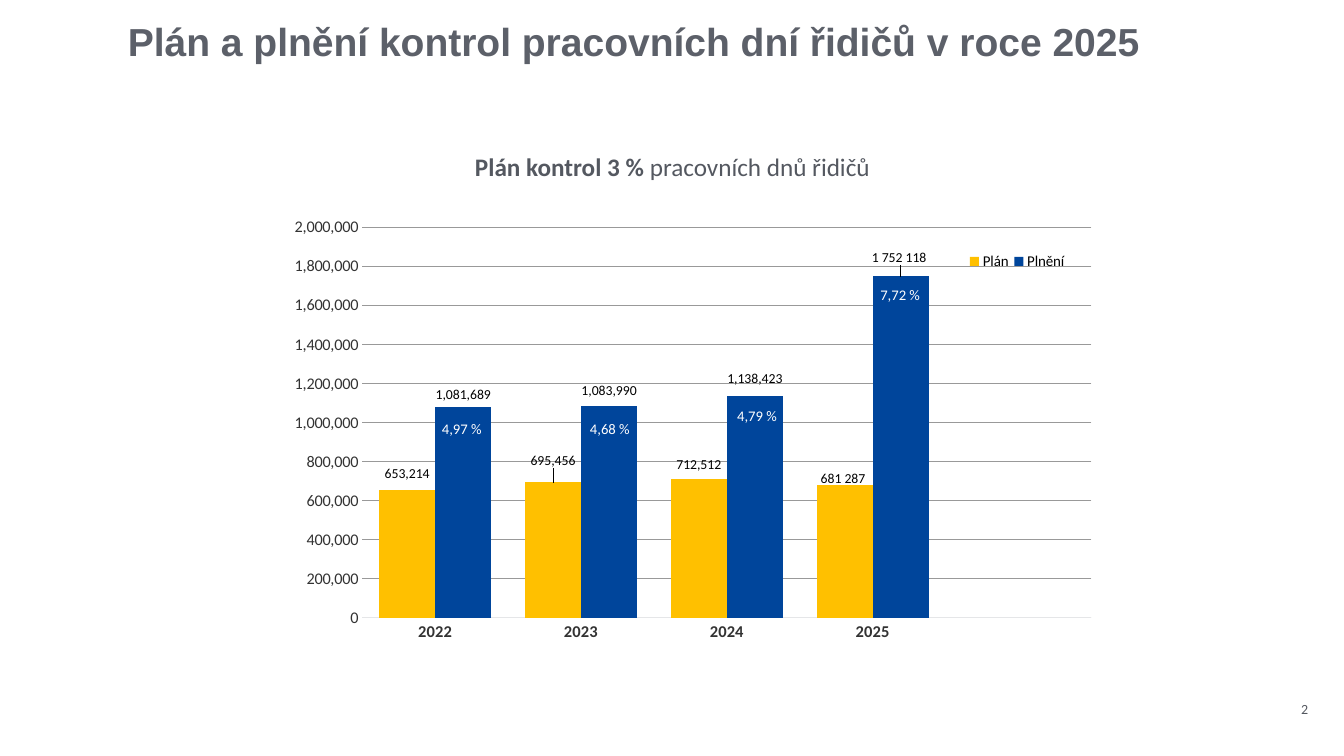
from pptx import Presentation
from pptx.chart.data import CategoryChartData
from pptx.dml.color import RGBColor
from pptx.enum.chart import XL_CHART_TYPE, XL_LABEL_POSITION, XL_LEGEND_POSITION, XL_TICK_MARK
from pptx.enum.text import MSO_ANCHOR, PP_ALIGN
from pptx.oxml import parse_xml
from pptx.oxml.ns import nsdecls
from pptx.util import Pt

TITLE = "Plán a plnění kontrol pracovních dní řidičů v roce 2025"
SUBTITLE = [("Plán kontrol 3 % ", True), ("pracovních dnů řidičů", False)]
PAGE = "2"
YEARS = ["2022", "2023", "2024", "2025", ""]
SERIES = [
    ("Plán", "FFC000", [653214, 695456, 712512, 681287, None], "681 287 ",
     [(0, -0.01), (0, -0.022), (0, -0.006), (0, 0.012)]),
    ("Plnění", "00459B", [1081689, 1083990, 1138423, 1752118, None], "1 752 118 ",
     [(0, 0), (0, -0.008), (0, -0.012), (0, -0.014)]),
]
SHARES = [("4,97 %", 304.6, 296.6), ("4,68 %", 410.4, 296.6),
          ("4,79 %", 515.5, 287.3), ("7,72 %", 617.8, 200.9)]
PLOT_AREA = (0.134, 0.045, 0.861, 0.872)
LEGEND_AREA = (0.845, 0.09, 0.125, 0.06)
GREY = "545860"


def rgb(value):
    return RGBColor.from_string(value)


def style(font, size, color, bold=False, name="Calibri"):
    font.size, font.bold, font.name = Pt(size), bold, name
    font.color.rgb = rgb(color)


def add_text(box, runs, size, color, align=PP_ALIGN.LEFT, anchor=MSO_ANCHOR.TOP,
             name="Calibri", wrap=True):
    tf = s.shapes.add_textbox(*map(Pt, box)).text_frame
    tf.word_wrap, tf.vertical_anchor = wrap, anchor
    p = tf.paragraphs[0]
    p.alignment = align
    for text, bold in runs:
        r = p.add_run()
        r.text = text
        style(r.font, size, color, bold, name)
    return tf


def layout(x, y, w=None, h=None, inner=False):
    target = '<c:layoutTarget val="inner"/>' if inner else ""
    modes = '<c:xMode val="edge"/><c:yMode val="edge"/>' if w else ""
    size = f'<c:w val="{w}"/><c:h val="{h}"/>' if w else ""
    return parse_xml(f'<c:layout {nsdecls("c")}><c:manualLayout>{target}{modes}'
                     f'<c:x val="{x}"/><c:y val="{y}"/>{size}</c:manualLayout></c:layout>')


prs = Presentation()
prs.slide_width, prs.slide_height = Pt(960), Pt(540)
s = prs.slides.add_slide(prs.slide_layouts[6])

tf = add_text((91.4, 16.6, 739.4, 96.5), [(TITLE, True)], 27.9, "5C6069", name="Arial")
tf.margin_left = tf.margin_top = tf.margin_right = tf.margin_bottom = 0
tf.paragraphs[0].line_spacing = 0.9
add_text((304.6, 104.4, 351.4, 28.8), SUBTITLE, 18, GREY, PP_ALIGN.CENTER)

data = CategoryChartData(number_format="#,##0")
data.categories = YEARS
for name, color, values, last_label, offsets in SERIES:
    data.add_series(name, values)
chart = s.shapes.add_chart(XL_CHART_TYPE.COLUMN_CLUSTERED, Pt(177.8), Pt(148.3),
                           Pt(604.8), Pt(319.7), data).chart
style(chart.font, 9.8, "000000")
chart.has_title = False
plot = chart.plots[0]
plot.gap_width, plot.overlap, plot.vary_by_categories = 60, 0, False

for series, (name, color, values, last_label, offsets) in zip(plot.series, SERIES):
    series.format.fill.solid()
    series.format.fill.fore_color.rgb = rgb(color)
    labels = series.data_labels
    labels.show_value = True
    labels.number_format, labels.number_format_is_linked = "#,##0", False
    labels.position = XL_LABEL_POSITION.OUTSIDE_END
    style(labels.font, 9.8, "000000")
    for i in range(len(offsets)):
        label = series.points[i].data_label
        label.position = XL_LABEL_POSITION.OUTSIDE_END
        if i == len(offsets) - 1:
            r = label.text_frame.paragraphs[0].add_run()
            r.text = last_label
            style(r.font, 9.8, "000000")
        else:
            style(label.font, 9.8, "000000")

all_offsets = [offset for row in SERIES for offset in row[4]]
for idx, offset in zip(chart.element.xpath(".//c:dLbl/c:idx"), all_offsets):
    idx.addnext(layout(*offset))

years = chart.category_axis
years.major_tick_mark = XL_TICK_MARK.NONE
years.format.line.color.rgb = rgb("E5E6E8")
years.format.line.width = Pt(0.73)
style(years.tick_labels.font, 11.8, "333333", True)

counts = chart.value_axis
counts.minimum_scale, counts.maximum_scale, counts.major_unit = 0, 2000000, 200000
counts.major_tick_mark = XL_TICK_MARK.NONE
counts.format.line.fill.background()
counts.major_gridlines.format.line.color.rgb = rgb("999999")
counts.major_gridlines.format.line.width = Pt(0.73)
counts.tick_labels.number_format = "#,##0"
counts.tick_labels.number_format_is_linked = False
style(counts.tick_labels.font, 11.6, "333333")

chart.has_legend = True
chart.legend.position = XL_LEGEND_POSITION.RIGHT
chart.legend.include_in_layout = False
style(chart.legend.font, 10.7, "000000")
for old in chart.element.xpath(".//c:plotArea/c:layout | .//c:legend/c:layout"):
    old.getparent().remove(old)
chart.element.xpath(".//c:plotArea")[0].insert(0, layout(*PLOT_AREA, inner=True))
chart.element.xpath(".//c:legendPos")[0].addnext(layout(*LEGEND_AREA))

add_text((922.3, 496.8, 20.2, 19.4), [(PAGE, False)], 10, GREY, wrap=False)
for share, left, top in SHARES:
    add_text((left, top, 50.4, 18.7), [(share, False)], 10.5, "FFFFFF",
             PP_ALIGN.CENTER, MSO_ANCHOR.MIDDLE)

prs.save("out.pptx")
